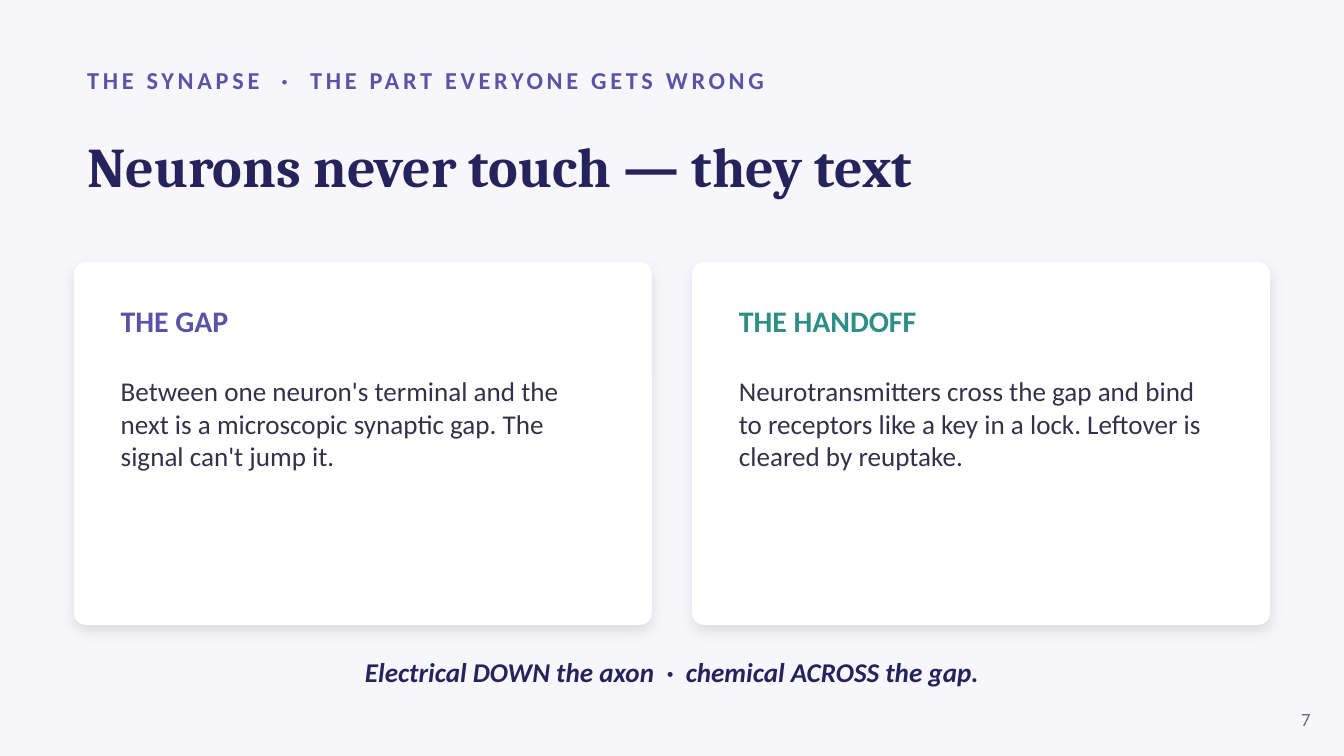
from lxml import etree
from pptx import Presentation
from pptx.dml.color import RGBColor
from pptx.enum import shapes, text
from pptx.oxml.ns import qn
from pptx.util import Inches, Pt

COLORS = {
    "background": "F7F7FB",
    "card": "FFFFFF",
    "shadow": "000000",
    "violet": "5B53A6",
    "navy": "26235C",
    "teal": "2F8F86",
    "body": "33324A",
    "muted": "6B6A86",
}


class SlideBuilder:
    body_font = "Calibri"
    title_font = "Cambria"

    def __init__(self, deck):
        self.page = deck.slides.add_slide(deck.slide_layouts[6])
        fill = self.page.background.fill
        fill.solid()
        fill.fore_color.rgb = self.color("background")

    def color(self, name):
        return RGBColor.from_string(COLORS[name])

    def style(self, para, size, color, bold=False, italic=False, font=None, spacing=0):
        for span in para.runs:
            span.font.name = font or self.body_font
            span.font.size = Pt(size)
            span.font.color.rgb = self.color(color)
            span.font.bold = bold
            span.font.italic = italic
            if spacing:
                span.font._element.set("spc", str(spacing * 100))

    def frame(self, left, top, width, height, anchor):
        box = self.page.shapes.add_textbox(
            Inches(left), Inches(top), Inches(width), Inches(height))
        box.text_frame.word_wrap = True
        box.text_frame.vertical_anchor = anchor
        return box.text_frame

    def line(self, words, left, top, width, height, size, color,
             align=text.PP_ALIGN.LEFT, **style):
        frame = self.frame(left, top, width, height, text.MSO_ANCHOR.MIDDLE)
        frame.text = words
        para = frame.paragraphs[0]
        para.alignment = align
        self.style(para, size, color, **style)

    def panel(self, left, top, width, height):
        card = self.page.shapes.add_shape(
            shapes.MSO_SHAPE.ROUNDED_RECTANGLE,
            Inches(left), Inches(top), Inches(width), Inches(height))
        card.adjustments[0] = 0.033
        card.fill.solid()
        card.fill.fore_color.rgb = self.color("card")
        card.line.fill.background()
        card.shadow.inherit = False
        effects = card._element.spPr.find(qn("a:effectLst"))
        shadow = etree.SubElement(
            effects, qn("a:outerShdw"), blurRad=str(Pt(7)), dist=str(Pt(3)),
            dir=str(90 * 60000), algn="bl", rotWithShape="0")
        tint = etree.SubElement(shadow, qn("a:srgbClr"), val=COLORS["shadow"])
        etree.SubElement(tint, qn("a:alpha"), val="10000")

    def card_text(self, heading, body, color, left, top, width, height):
        frame = self.frame(left, top, width, height, text.MSO_ANCHOR.TOP)
        frame.text = f"{heading}\n{body}"
        title, detail = frame.paragraphs
        title.space_after = Pt(19.5)
        self.style(title, 16, color, bold=True)
        self.style(detail, 14.5, "body")


def main():
    deck = Presentation()
    deck.slide_width = Inches(10)
    deck.slide_height = Inches(5.625)
    slide = SlideBuilder(deck)

    margin, card_top, card_width, card_height, gap = 0.55, 1.95, 4.3, 2.7, 0.3
    padding = 0.25
    cards = [
        ("THE GAP", "Between one neuron's terminal and the next is a microscopic "
         "synaptic gap. The signal can't jump it.", "violet"),
        ("THE HANDOFF", "Neurotransmitters cross the gap and bind to receptors like "
         "a key in a lock. Leftover is cleared by reuptake.", "teal"),
    ]

    slide.line("THE SYNAPSE  ·  THE PART EVERYONE GETS WRONG",
               margin, 0.42, 9, 0.35, 13, "violet", bold=True, spacing=2)
    slide.line("Neurons never touch — they text",
               margin, 0.78, 8.9, 0.9, 30, "navy", bold=True, font=slide.title_font)
    for index, (heading, body, color) in enumerate(cards):
        left = margin + index * (card_width + gap)
        slide.panel(left, card_top, card_width, card_height)
        slide.card_text(heading, body, color, left + padding, card_top + padding,
                        card_width - 2 * padding, 2.3)
    slide.line("Electrical DOWN the axon  ·  chemical ACROSS the gap.",
               margin, 4.8, 8.9, 0.4, 14.5, "navy",
               align=text.PP_ALIGN.CENTER, bold=True, italic=True)
    slide.line("7", 9.35, 5.2, 0.5, 0.3, 10, "muted", align=text.PP_ALIGN.RIGHT)

    deck.save("out.pptx")


if __name__ == "__main__":
    main()
